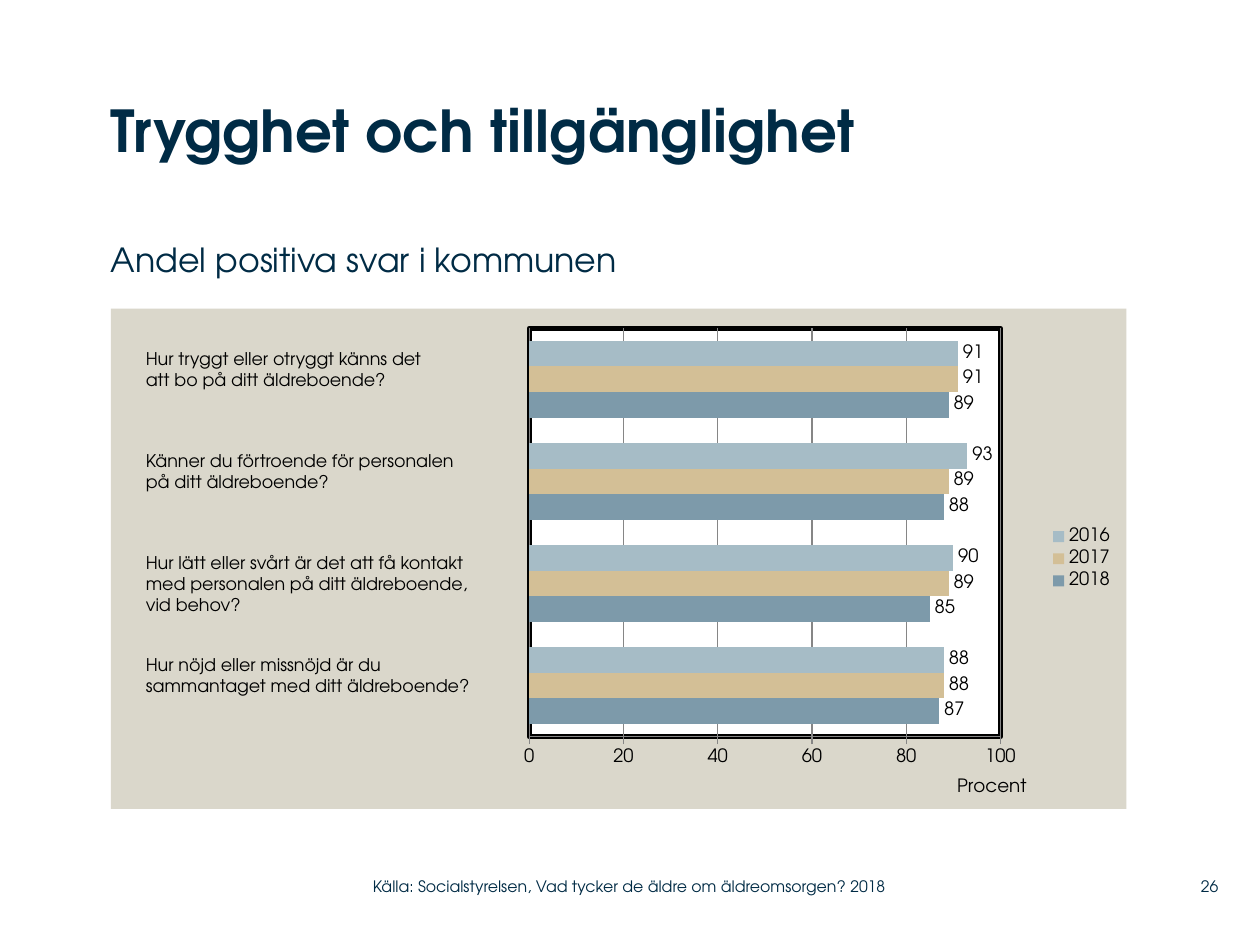
from pptx import Presentation
from pptx.chart.data import CategoryChartData
from pptx.dml.color import RGBColor
from pptx.enum.chart import XL_CHART_TYPE, XL_LABEL_POSITION, XL_LEGEND_POSITION, XL_TICK_MARK
from pptx.enum.text import MSO_ANCHOR, PP_ALIGN
from pptx.oxml import parse_xml
from pptx.oxml.ns import nsdecls, qn
from pptx.util import Inches, Pt

FONT = "TeX Gyre Adventor"
NAVY, BLACK, WHITE = "002B45", "000000", "FFFFFF"
SAND, GRID_GRAY = "DAD7CB", "868686"

QUESTIONS = [
    "Hur tryggt eller otryggt känns det\natt bo på ditt äldreboende?",
    "Känner du förtroende för personalen\npå ditt äldreboende?",
    "Hur lätt eller svårt är det att få kontakt\nmed personalen på ditt äldreboende,\nvid behov?",
    "Hur nöjd eller missnöjd är du\nsammantaget med ditt äldreboende?",
]
YEARS = [
    ("2018", (87, 85, 88, 89), "7D9AAA"),
    ("2017", (88, 89, 89, 91), "D3BF96"),
    ("2016", (88, 90, 93, 91), "A6BCC6"),
]


def color(hex_string):
    return RGBColor.from_string(hex_string)


def style_font(font, size, hex_string=BLACK, bold=False):
    font.name = FONT
    font.size = Pt(size)
    font.bold = bold
    font.color.rgb = color(hex_string)


def add_text(slide, text, box, size, hex_string=NAVY, bold=False, inset=0.0,
             anchor=MSO_ANCHOR.TOP, align=PP_ALIGN.LEFT):
    frame = slide.shapes.add_textbox(*map(Inches, box)).text_frame
    frame.word_wrap = True
    frame.vertical_anchor = anchor
    frame.margin_left = frame.margin_right = Inches(inset)
    frame.margin_top = frame.margin_bottom = Inches(inset / 2)
    paragraph = frame.paragraphs[0]
    paragraph.text = text
    paragraph.alignment = align
    for run in paragraph.runs:
        style_font(run.font, size, hex_string, bold)


def area_format(fill, line=None, width=0):
    outline = "<a:ln><a:noFill/></a:ln>"
    if line:
        outline = (f'<a:ln w="{Pt(width)}"><a:solidFill><a:srgbClr val="{line}"/>'
                   "</a:solidFill><a:miter/></a:ln>")
    return parse_xml(
        f'<c:spPr {nsdecls("c", "a")}><a:solidFill><a:srgbClr val="{fill}"/>'
        f"</a:solidFill>{outline}</c:spPr>")


def set_layout(element, inner=False, **position):
    target = '<c:layoutTarget val="inner"/>' if inner else ""
    modes = "".join(f'<c:{key}Mode val="edge"/>' for key in "xy")
    values = "".join(f'<c:{key} val="{value}"/>' for key, value in position.items())
    layout = parse_xml(
        f'<c:layout {nsdecls("c")}><c:manualLayout>{target}{modes}{values}'
        "</c:manualLayout></c:layout>")
    existing = element.find(qn("c:layout"))
    if existing is None:
        element.insert(0, layout)
    else:
        element.replace(existing, layout)


def style_value_axis(axis):
    axis.minimum_scale, axis.maximum_scale, axis.major_unit = 0, 100, 20
    axis.major_tick_mark = XL_TICK_MARK.OUTSIDE
    axis.minor_tick_mark = XL_TICK_MARK.NONE
    axis.has_major_gridlines = True
    for line in (axis.format.line, axis.major_gridlines.format.line):
        line.color.rgb = color(GRID_GRAY)
        line.width = Pt(0.75)
    style_font(axis.tick_labels.font, 10.5)
    axis.tick_labels.number_format = "0"
    axis.tick_labels.number_format_is_linked = False
    title = axis.axis_title
    title.text_frame.text = "Procent"
    style_font(title.text_frame.paragraphs[0].runs[0].font, 10.5)
    set_layout(title._element, x=0.83, y=0.93)


def add_answer_chart(slide, box):
    data = CategoryChartData(number_format="0")
    data.categories = ["1", "2", "3", "4"]
    for year, values, _ in YEARS:
        data.add_series(year, values)
    chart = slide.shapes.add_chart(
        XL_CHART_TYPE.BAR_CLUSTERED, *map(Inches, box), data).chart
    style_font(chart.font, 10)
    chart.has_title = False
    chart.has_legend = True
    chart.legend.position = XL_LEGEND_POSITION.RIGHT
    chart.legend.include_in_layout = False
    style_font(chart.legend.font, 10.5)

    plot = chart.plots[0]
    plot.gap_width = 100
    plot.overlap = 0
    plot.vary_by_categories = False
    for series, (_, _, fill) in zip(plot.series, YEARS):
        series.format.fill.solid()
        series.format.fill.fore_color.rgb = color(fill)
        labels = series.data_labels
        labels.show_value = True
        labels.position = XL_LABEL_POSITION.OUTSIDE_END
        style_font(labels.font, 10.5)

    chart.category_axis.visible = False
    style_value_axis(chart.value_axis)
    chart_element = chart._chartSpace.chart
    set_layout(chart_element.plotArea, inner=True, x=0.412, y=0.039, w=0.464, h=0.817)
    chart_element.plotArea.append(area_format(WHITE, BLACK, 3))
    chart_element.addnext(area_format(SAND))


def main():
    presentation = Presentation()
    presentation.slide_width = Inches(10)
    presentation.slide_height = Inches(7.5)
    slide = presentation.slides.add_slide(presentation.slide_layouts[6])

    add_text(slide, "Trygghet och tillgänglighet", (0.88, 0.75, 8.36, 1.1), 33, bold=True)
    add_text(slide, "Andel positiva svar i kommunen", (0.88, 1.9, 6.93, 0.45), 19)
    add_answer_chart(slide, (0.88, 2.45, 8.06, 3.97))
    for index, question in enumerate(QUESTIONS):
        height = 0.27 + 0.17 * question.count("\n")
        add_text(slide, question, (1.06, 2.71 + 0.81 * index, 3.16, height), 10,
                 BLACK, inset=0.1)
    add_text(slide, "26", (9.2, 6.89, 0.47, 0.29), 9,
             anchor=MSO_ANCHOR.MIDDLE, align=PP_ALIGN.RIGHT)
    add_text(slide, "Källa: Socialstyrelsen, Vad tycker de äldre om äldreomsorgen? 2018",
             (2.96, 6.89, 4.43, 0.29), 9, anchor=MSO_ANCHOR.MIDDLE)
    presentation.save("out.pptx")


if __name__ == "__main__":
    main()
